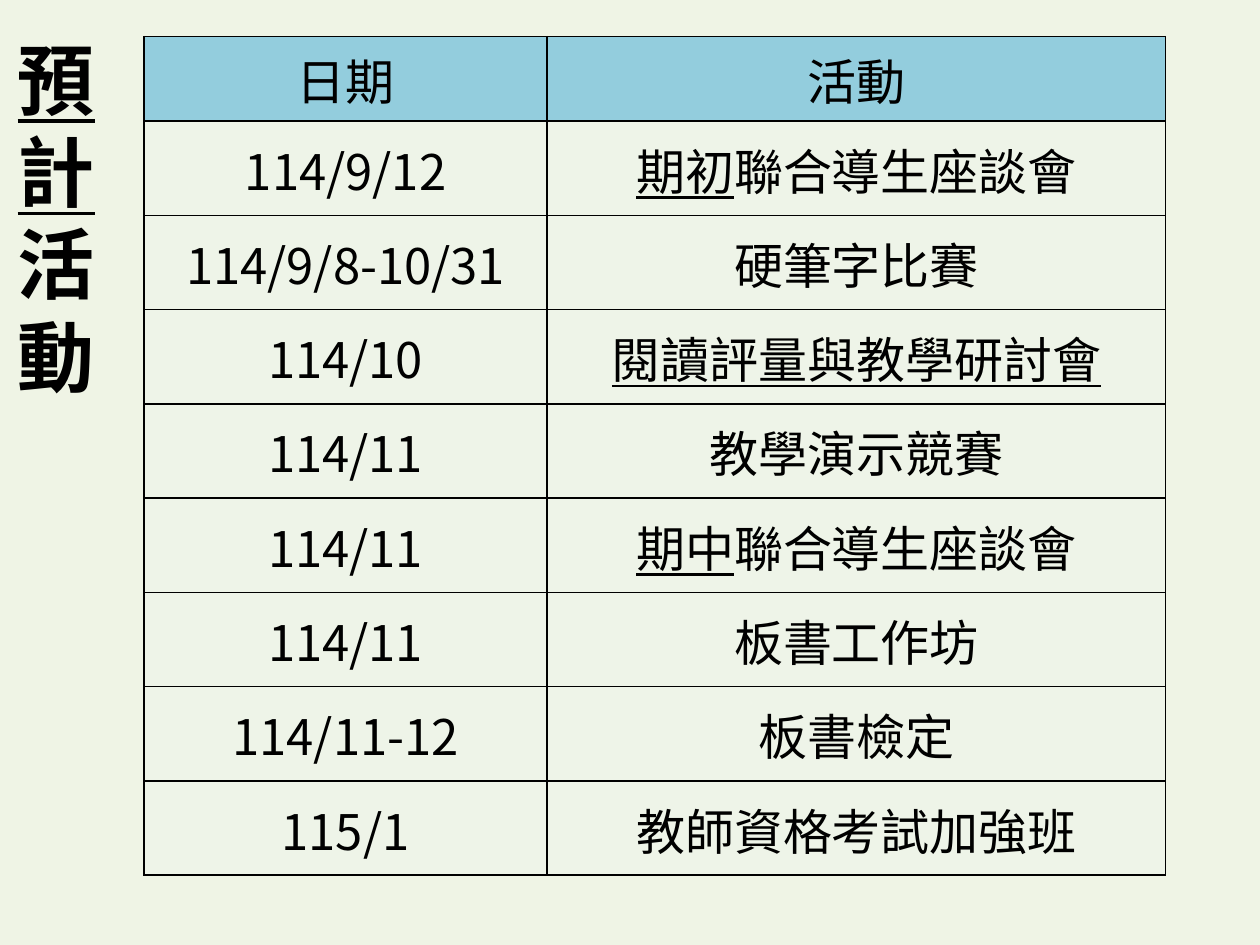
from dataclasses import dataclass

from lxml.etree import SubElement
from pptx import Presentation
from pptx.dml.color import RGBColor
from pptx.enum.text import MSO_ANCHOR, MSO_AUTO_SIZE, PP_ALIGN
from pptx.oxml import parse_xml
from pptx.oxml.ns import nsdecls, qn
from pptx.slide import Slide
from pptx.table import _Cell
from pptx.util import Cm, Pt

FONT = "Noto Sans CJK SC"
BLACK = RGBColor(0x00, 0x00, 0x00)
BACKGROUND = RGBColor(0xEF, 0xF4, 0xE5)
HEADER_FILL = RGBColor(0x93, 0xCD, 0xDD)
BODY_FILL = RGBColor(0xEE, 0xF4, 0xE8)
COL_WIDTHS = (8.13, 12.47)
HEADER_HEIGHT = 1.7
ROW_HEIGHT = 1.9


@dataclass
class Event:
    date: str
    name: str
    underlined: str = ""


HEADER = Event("日期", "活動")
EVENTS = [
    Event("114/9/12", "聯合導生座談會", "期初"),
    Event("114/9/8-10/31", "硬筆字比賽"),
    Event("114/10", "", "閱讀評量與教學研討會"),
    Event("114/11", "教學演示競賽"),
    Event("114/11", "聯合導生座談會", "期中"),
    Event("114/11", "板書工作坊"),
    Event("114/11-12", "板書檢定"),
    Event("115/1", "教師資格考試加強班"),
]


def add_run(p, text: str, size: int, bold: bool = False, underline: bool = False) -> None:
    r = p.add_run()
    r.text = text
    r.font.name = FONT
    r.font.size = Pt(size)
    r.font.bold = bold
    r.font.underline = underline
    r.font.color.rgb = BLACK
    SubElement(r.font._element, qn("a:ea"), typeface=FONT)


def add_borders(cell: _Cell) -> None:
    tc_pr = cell._tc.get_or_add_tcPr()
    for i, side in enumerate(("lnL", "lnR", "lnT", "lnB")):
        tc_pr.insert(i, parse_xml(
            f'<a:{side} {nsdecls("a")} w="{Pt(1)}"><a:solidFill>'
            f'<a:srgbClr val="{BLACK}"/></a:solidFill></a:{side}>'))


def fill_cell(cell: _Cell, text: str, underlined: str, fill: RGBColor, inset: float) -> None:
    cell.fill.solid()
    cell.fill.fore_color.rgb = fill
    cell.vertical_anchor = MSO_ANCHOR.MIDDLE
    cell.margin_left = cell.margin_right = Cm(inset)
    cell.margin_top, cell.margin_bottom = Cm(0.03), Cm(0)
    add_borders(cell)
    p = cell.text_frame.paragraphs[0]
    p.alignment = PP_ALIGN.CENTER
    if underlined:
        add_run(p, underlined, 28, underline=True)
    if text:
        add_run(p, text, 28)


def add_title(s: Slide) -> None:
    sp = s.shapes.title
    sp.left, sp.top, sp.width, sp.height = Cm(0.1), Cm(-1.07), Cm(2.24), Cm(10.9)
    tf = sp.text_frame
    tf.word_wrap = True
    tf.auto_size = MSO_AUTO_SIZE.NONE
    tf.vertical_anchor = MSO_ANCHOR.MIDDLE
    p = tf.paragraphs[0]
    p.alignment = PP_ALIGN.LEFT
    p.line_spacing = Pt(52.6)
    add_run(p, "預計", 44, bold=True, underline=True)
    add_run(p, "活動", 44, bold=True)


def add_schedule(s: Slide) -> None:
    rows = [HEADER, *EVENTS]
    height = HEADER_HEIGHT + ROW_HEIGHT * len(EVENTS)
    table = s.shapes.add_table(len(rows), len(COL_WIDTHS), Cm(2.9), Cm(0.74),
                               Cm(sum(COL_WIDTHS)), Cm(height)).table
    table.horz_banding = False
    for col, width in zip(table.columns, COL_WIDTHS):
        col.width = Cm(width)
    for i, event in enumerate(rows):
        is_header = event is HEADER
        table.rows[i].height = Cm(HEADER_HEIGHT if is_header else ROW_HEIGHT)
        fill = HEADER_FILL if is_header else BODY_FILL
        inset = 0.08 if is_header else 0.13
        fill_cell(table.cell(i, 0), event.date, "", fill, inset)
        fill_cell(table.cell(i, 1), event.name, event.underlined, fill, inset)


def main() -> None:
    prs = Presentation()
    prs.slide_width, prs.slide_height = Cm(25.4), Cm(19.05)
    s = prs.slides.add_slide(prs.slide_layouts[5])
    s.background.fill.solid()
    s.background.fill.fore_color.rgb = BACKGROUND
    add_title(s)
    add_schedule(s)
    prs.save("out.pptx")


if __name__ == "__main__":
    main()
